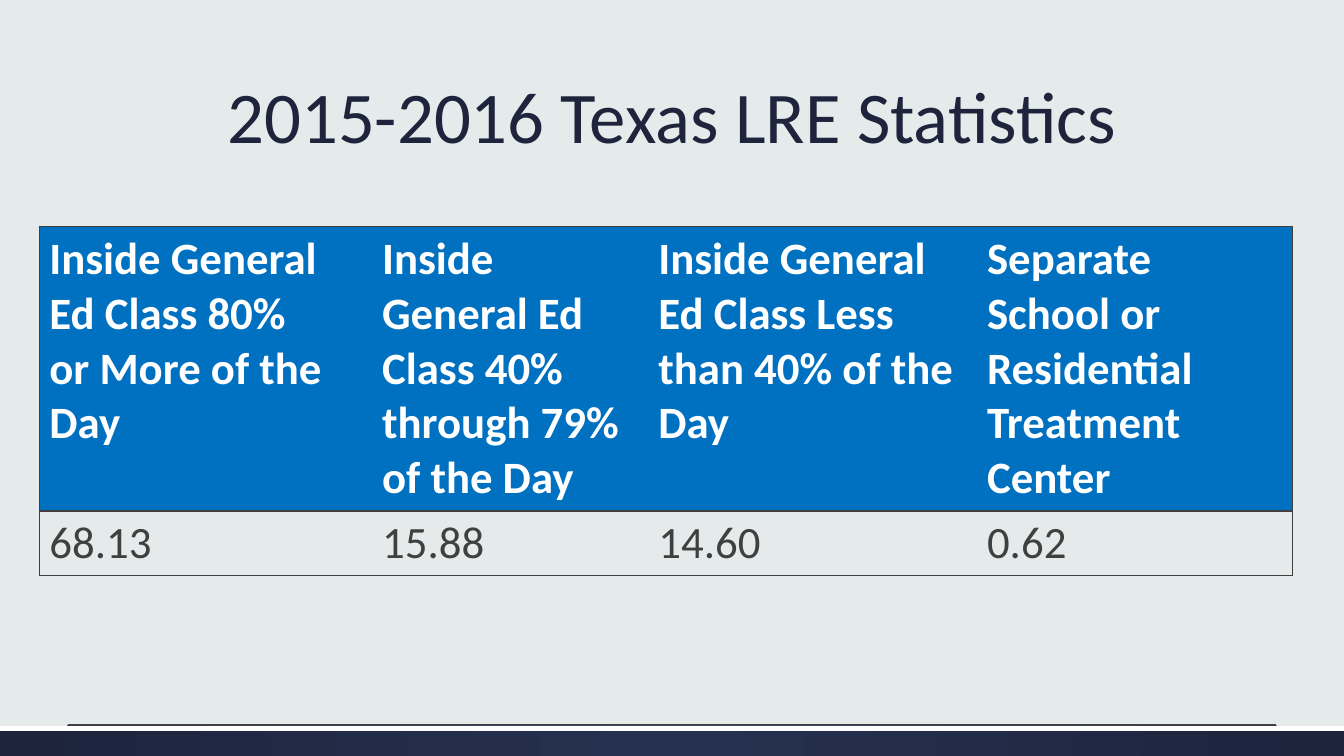
from lxml import etree
from pptx import Presentation
from pptx import util as u
from pptx.dml.color import RGBColor
from pptx.enum import shapes, text
from pptx.oxml import parse_xml
from pptx.oxml.ns import nsdecls, qn

NAVY, WHITE, GRAY, BLUE = "1D243C", "FFFFFF", "404040", "0070C0"


def color(hex_string):
    return RGBColor.from_string(hex_string)


def add_run(paragraph, words, size, hex_string, bold=False):
    run = paragraph.add_run()
    run.text = words
    run.font.name = "Calibri"
    run.font.size = u.Pt(size)
    run.font.bold = bold
    run.font.color.rgb = color(hex_string)


presentation = Presentation()
presentation.slide_width = u.Inches(13.33)
presentation.slide_height = u.Inches(7.5)
slide = presentation.slides.add_slide(presentation.slide_layouts[6])
slide.background.fill.solid()
slide.background.fill.fore_color.rgb = color("E5EAEA")

# Footer band with a white strip on its top edge
footer_bars = []
for height in (0.3, 0.05):
    bar = slide.shapes.add_shape(shapes.MSO_SHAPE.RECTANGLE, 0, u.Inches(7.2),
                                 u.Inches(13.33), u.Inches(height))
    bar.shadow.inherit = False
    bar.line.fill.background()
    footer_bars.append(bar)
band, strip = footer_bars
strip.fill.solid()
strip.fill.fore_color.rgb = color(WHITE)

# Radial gradient of the band
band.fill.gradient()
for stop, hex_string in zip(band.fill.gradient_stops, ("263050", NAVY)):
    stop.color.rgb = color(hex_string)
gradient = band._element.spPr.find(qn("a:gradFill"))
gradient.replace(gradient.find(qn("a:lin")), parse_xml(
    f'<a:path {nsdecls("a")} path="circle">'
    '<a:fillToRect l="50000" t="50000" r="50000" b="50000"/></a:path>'))

# Thin rule above the footer
rule = slide.shapes.add_connector(shapes.MSO_CONNECTOR.STRAIGHT, u.Inches(0.67), u.Inches(7.19),
                                  u.Inches(12.66), u.Inches(7.19))
rule.line.color.rgb = color(GRAY)
rule.line.width = u.Pt(0.75)
etree.SubElement(rule._element.spPr, qn("a:effectLst"))

# Title
title = slide.shapes.add_textbox(u.Inches(0.52), u.Inches(0.28), u.Inches(12.29), u.Inches(1.35))
title.text_frame.word_wrap = True
title.text_frame.vertical_anchor = text.MSO_ANCHOR.BOTTOM
paragraph = title.text_frame.paragraphs[0]
paragraph.alignment = text.PP_ALIGN.CENTER
paragraph.line_spacing = 0.9
add_run(paragraph, "2015-2016 Texas LRE Statistics", 52, NAVY)

# Table: one entry per column, with width, heading paragraphs and value
columns = [
    (3.3, ["Inside General Ed Class 80%", "or More of the Day"], "68.13"),
    (2.74, ["Inside General Ed Class 40% through 79% of the Day"], "15.88"),
    (3.26, ["Inside General Ed Class Less than 40% of the Day"], "14.60"),
    (3.13, ["Separate School or Residential Treatment Center"], "0.62"),
]
table = slide.shapes.add_table(2, len(columns), u.Inches(0.39), u.Inches(2.25),
                               u.Inches(12.43), u.Inches(3.46)).table
table.horz_banding = False
table.rows[0].height = u.Inches(2.82)
table.rows[1].height = u.Inches(0.64)

for column_index, (width, heading, value) in enumerate(columns):
    table.columns[column_index].width = u.Inches(width)
    for row_index, lines in enumerate((heading, [value])):
        cell = table.cell(row_index, column_index)
        is_heading = row_index == 0
        for line_index, line in enumerate(lines):
            frame = cell.text_frame
            paragraph = frame.add_paragraph() if line_index else frame.paragraphs[0]
            add_run(paragraph, line, 32, WHITE if is_heading else GRAY, is_heading)

        # Rules run across each row and close the outer left and right sides
        drawn = {"L": column_index == 0, "R": column_index == len(columns) - 1,
                 "T": True, "B": True}
        for side, visible in drawn.items():
            fill = f'<a:solidFill><a:srgbClr val="{GRAY}"/></a:solidFill>' if visible else "<a:noFill/>"
            cell._tc.get_or_add_tcPr().append(parse_xml(
                f'<a:ln{side} {nsdecls("a")} w="12700">{fill}</a:ln{side}>'))
        if is_heading:
            cell.fill.solid()
            cell.fill.fore_color.rgb = color(BLUE)
        else:
            cell.fill.background()

presentation.save("out.pptx")
